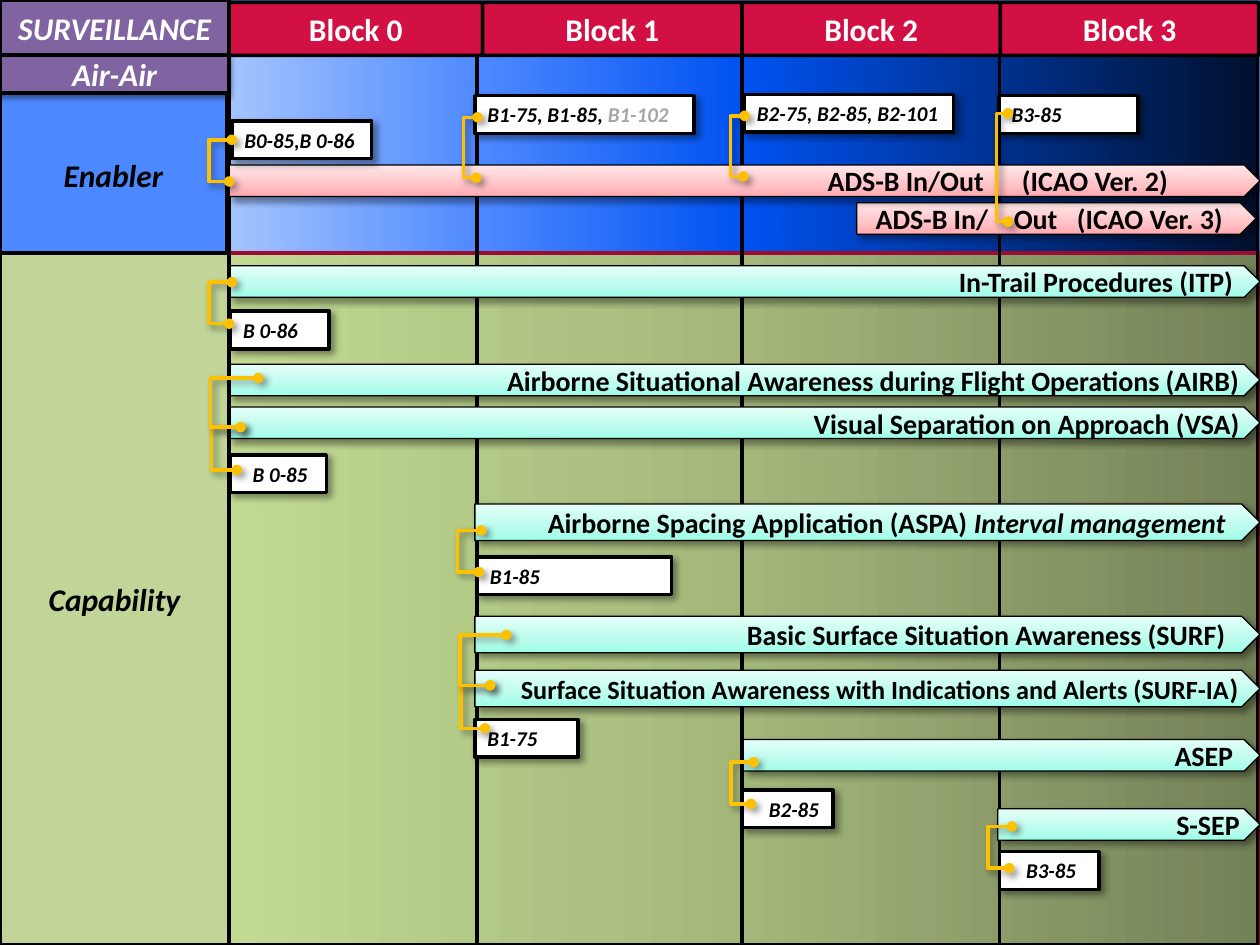
from dataclasses import dataclass

from lxml import etree
from pptx import Presentation
from pptx.dml.color import RGBColor
from pptx.enum.shapes import MSO_CONNECTOR, MSO_SHAPE
from pptx.enum.text import MSO_ANCHOR, PP_ALIGN
from pptx.oxml.ns import qn
from pptx.util import Pt

RECT, PLATE, ROUND = MSO_SHAPE.RECTANGLE, MSO_SHAPE.PENTAGON, MSO_SHAPE.ROUNDED_RECTANGLE
ELBOW, MIDDLE = MSO_CONNECTOR.ELBOW, MSO_ANCHOR.MIDDLE
LEFT, CENTER, RIGHT = PP_ALIGN.LEFT, PP_ALIGN.CENTER, PP_ALIGN.RIGHT

COLORS = {
    "page": "2C6ABA", "black": "000000", "white": "FFFFFF", "grey": "A6A6A6",
    "crimson": "D31044", "frame": "9C0C32", "purple": "8064A2",
    "enabler": "4C88FF", "capability": "C0D597", "link": "FFC000",
}
# Each gradient: angle, then (position in percent, colour)
GRADIENTS = {
    "sky": (0, [(0, "A5C4FF"), (25, "4C88FF"), (50, "0052F1"), (100, "00102E")]),
    "field": (180, [(0, "738157"), (50, "A3B77B"), (100, "C2DA92")]),
    "pink": (90, [(0, "FFA8AF"), (35, "FFC2C6"), (100, "FFE8E9")]),
    "mint": (90, [(0, "9DFDE8"), (35, "BBFCED"), (100, "E4FFF9")]),
}
SOFT_SHADOW = (40, 4, 3, 45)  # opacity, blur, distance, direction
LABEL_SHADOW = (38, 3.1, 1.6, 90)


@dataclass
class Span:
    text: str
    color: str = ""
    size: float = 0
    italic: bool = False


@dataclass
class Bar:
    left: float
    top: float
    spans: list[Span]
    inset: float = 7.2
    height: float = 18
    right: float = 720
    fill: str = "mint"
    tabs: tuple = ()


@dataclass
class Tag:
    left: float
    top: float
    width: float
    spans: list[Span]
    inset: float = 7.2


@dataclass
class Bracket:
    start: tuple
    end: tuple
    spine: float
    end_dot: bool = True


BARS = [
    Bar(489.6, 115.9, [Span("ADS-B In/\tOut\t(ICAO Ver. 3)")], 10.8, 18, 717.8, "pink", (79, 115)),
    Bar(131, 94.3, [Span("ADS-B In/Out\t(ICAO Ver. 2)")], 342, fill="pink", tabs=(111,)),
    Bar(130.3, 151.9, [Span("In-Trail Procedures (ITP)")], 10.8),
    Bar(130.3, 208.1, [Span("Airborne Situational Awareness during Flight Operations (AIRB)")]),
    Bar(130.3, 232.6, [Span("Visual Separation on Approach (VSA)")]),
    Bar(271.4, 288, [Span("Airborne Spacing Application (ASPA) "),
                     Span("Interval management", italic=True)], 14.4, 20.9),
    Bar(271.4, 352.1, [Span("Basic Surface Situation Awareness (SURF)")], 14.4, 20.9),
    Bar(271.4, 383, [Span("Surface Situation Awareness with Indications and Alerts (SURF-IA", size=15),
                     Span(")")], height=20.9),
    Bar(424.8, 422.6, [Span("ASEP")], 10.8),
    Bar(570.2, 462.2, [Span("S-SEP")]),
]
TAGS = [
    Tag(132.5, 69.1, 79.9, [Span("B0-85,B 0-86")]),
    Tag(271.4, 54.7, 125.3, [Span("B1-75, B1-85, "), Span("B1-102", "grey")]),
    Tag(425.5, 54, 119.5, [Span("B2-75, B2-85, B2-101")]),
    Tag(571, 54.7, 79.2, [Span("B3-85")]),
    Tag(131.8, 177.8, 56.2, [Span("B 0-86")]),
    Tag(131.8, 259.9, 54.7, [Span("B 0-85")], 12.6),
    Tag(272.9, 318.2, 110.9, [Span("B1-85")]),
    Tag(271.4, 411.1, 59, [Span("B1-75")]),
    Tag(424.1, 451.4, 51.8, [Span("B2-85")], 15.3),
    Tag(571, 486.7, 56.9, [Span("B3-85")], 15.3),
]
BRACKETS = [
    Bracket((132.5, 79.9), (131, 103.7), 119.5),
    Bracket((272.9, 67), (272.2, 101.5), 265),
    Bracket((425.5, 66.2), (424.8, 100.8), 417.6),
    Bracket((576, 64.8), (569.5, 95.4), 569.5, False),
    Bracket((576, 126.7), (569.5, 95.4), 569.5, False),
    Bracket((132.5, 161.3), (131, 185), 119.5),
    Bracket((137.5, 244.1), (135.4, 268.6), 121),
    Bracket((137.5, 244.1), (147.6, 216), 120.2),
    Bracket((275, 303.1), (273.6, 326.9), 261.4),
    Bracket((280.1, 391.7), (277.2, 416.2), 263.5),
    Bracket((280.1, 391.7), (289.4, 362.9), 262.8),
    Bracket((430.6, 435.6), (429.1, 459.4), 417.6),
    Bracket((578.2, 472.3), (576.7, 496.1), 564.5),
]
COLUMN_EDGES = [131, 272.5, 424, 571.2, 718.6]
HEADER_EDGES = [131, 275.8, 424, 571.7, 719.3]


def rgb(name: str) -> RGBColor:
    return RGBColor.from_string(COLORS[name])


def add_node(parent, tag: str, **attributes):
    return etree.SubElement(parent, qn(tag), {key: str(value) for key, value in attributes.items()})


def add_shadow(effects, shadow: tuple) -> None:
    opacity, blur, distance, direction = shadow
    outer = add_node(effects, "a:outerShdw", blurRad=int(Pt(blur)), dist=int(Pt(distance)),
                     dir=direction * 60000, algn="ctr", rotWithShape=0)
    color = add_node(outer, "a:srgbClr", val=COLORS["black"])
    add_node(color, "a:alpha", val=opacity * 1000)


def add_box(page, kind, left: float, top: float, width: float, height: float,
            fill: str = "", line: str = "black", weight: float = 2, shadow: tuple = ()):
    """Add a shape whose fill is a colour name, a gradient name or nothing."""
    box = page.shapes.add_shape(kind, Pt(left), Pt(top), Pt(width), Pt(height))
    if fill in GRADIENTS:
        angle, stops = GRADIENTS[fill]
        box.fill.gradient()
        box.fill.gradient_angle = angle
        stop_list = box._element.spPr.find(".//" + qn("a:gsLst"))
        stop_list.clear()
        for position, color in stops:
            add_node(add_node(stop_list, "a:gs", pos=position * 1000), "a:srgbClr", val=color)
    elif fill:
        box.fill.solid()
        box.fill.fore_color.rgb = rgb(fill)
    else:
        box.fill.background()
    box.line.color.rgb = rgb(line)
    box.line.width = Pt(weight)
    box.shadow.inherit = False
    if shadow:
        add_shadow(box._element.spPr.find(qn("a:effectLst")), shadow)
    return box


def write(box, spans: list[Span], size: float, align, color: str = "black",
          italic: bool = False, tabs: tuple = ()) -> None:
    frame = box.text_frame
    frame.word_wrap = True
    frame.vertical_anchor = MIDDLE
    para = frame.paragraphs[0]
    para.alignment = align
    if tabs:
        tab_list = add_node(para._p.get_or_add_pPr(), "a:tabLst")
        for position in tabs:
            add_node(tab_list, "a:tab", pos=int(Pt(position)), algn="l")
    para.font.name, para.font.bold, para.font.italic = "Calibri", True, italic
    para.font.size, para.font.color.rgb = Pt(size), rgb(color)
    for span in spans:
        run = para.add_run()
        run.text = span.text
        if span.color:
            run.font.color.rgb = rgb(span.color)
        if span.size:
            run.font.size = Pt(span.size)
        if span.italic:
            run.font.italic = True


def add_bar(page, bar: Bar) -> None:
    box = add_box(page, PLATE, bar.left, bar.top, bar.right - bar.left, bar.height,
                  bar.fill, weight=0.75, shadow=SOFT_SHADOW)
    if bar.tabs:
        box.text_frame.margin_left = Pt(bar.inset)
    else:
        box.text_frame.margin_right = Pt(bar.inset)
    write(box, bar.spans, 16, LEFT if bar.tabs else RIGHT, tabs=bar.tabs)


def add_tag(page, tag: Tag) -> None:
    box = add_box(page, RECT, tag.left, tag.top, tag.width, 21.6, "white", shadow=SOFT_SHADOW)
    box.text_frame.margin_left, box.text_frame.margin_right = Pt(tag.inset), Pt(0)
    write(box, tag.spans, 12, LEFT, italic=True)


def add_bracket(page, bracket: Bracket) -> None:
    """Join two points by an elbow whose upright runs at the spine."""
    (x1, y1), (x2, y2) = bracket.start, bracket.end
    link = page.shapes.add_connector(ELBOW, Pt(x1), Pt(y1), Pt(x2), Pt(y2))
    link.line.color.rgb = rgb("link")
    link.line.width = Pt(2)
    properties = link._element.spPr
    bend = round((bracket.spine - x1) / (x2 - x1) * 100000)
    add_node(properties.find(".//" + qn("a:avLst")), "a:gd", name="adj1", fmla=f"val {bend}")
    outline = properties.find(qn("a:ln"))
    add_node(outline, "a:headEnd", type="oval")
    if bracket.end_dot:
        add_node(outline, "a:tailEnd", type="oval")
    add_shadow(add_node(properties, "a:effectLst"), SOFT_SHADOW)


def main() -> None:
    deck = Presentation()
    deck.slide_width, deck.slide_height = Pt(720), Pt(540)
    page = deck.slides.add_slide(deck.slide_layouts[6])
    page.background.fill.solid()
    page.background.fill.fore_color.rgb = rgb("page")

    add_box(page, RECT, 130.3, 28.8, 588.3, 115.9, "sky", "frame")
    add_box(page, RECT, 130.3, 144.7, 589.7, 395.3, "field", "frame")
    enabler = add_box(page, RECT, 0, 53.3, 129.6, 92.9, "enabler")
    write(enabler, [Span("Enabler")], 18, CENTER, italic=True)
    for left, right in zip(COLUMN_EDGES, COLUMN_EDGES[1:]):
        add_box(page, RECT, left, 15, right - left, 525)
    for bar in BARS:
        add_bar(page, bar)

    air = add_box(page, RECT, 0, 31.7, 131, 21.6, "purple", weight=2.25, shadow=LABEL_SHADOW)
    write(air, [Span("Air-Air")], 18, CENTER, "white", True)
    capability = add_box(page, RECT, 0, 144.7, 131, 395.3, "capability")
    write(capability, [Span("Capability")], 18, CENTER, italic=True)
    title = add_box(page, RECT, 0, 0, 131, 31.7, "purple", weight=2.25)
    write(title, [Span("SURVEILLANCE")], 18, CENTER, "white", True)

    for tag in TAGS:
        add_tag(page, tag)
    for bracket in BRACKETS:
        add_bracket(page, bracket)
    for number, (left, right) in enumerate(zip(HEADER_EDGES, HEADER_EDGES[1:])):
        header = add_box(page, ROUND, left, 1.4, right - left, 30.3, "crimson")
        header.adjustments[0] = 0.02
        write(header, [Span(f"Block {number}")], 18, CENTER, "white")
    deck.save("out.pptx")


if __name__ == "__main__":
    main()
